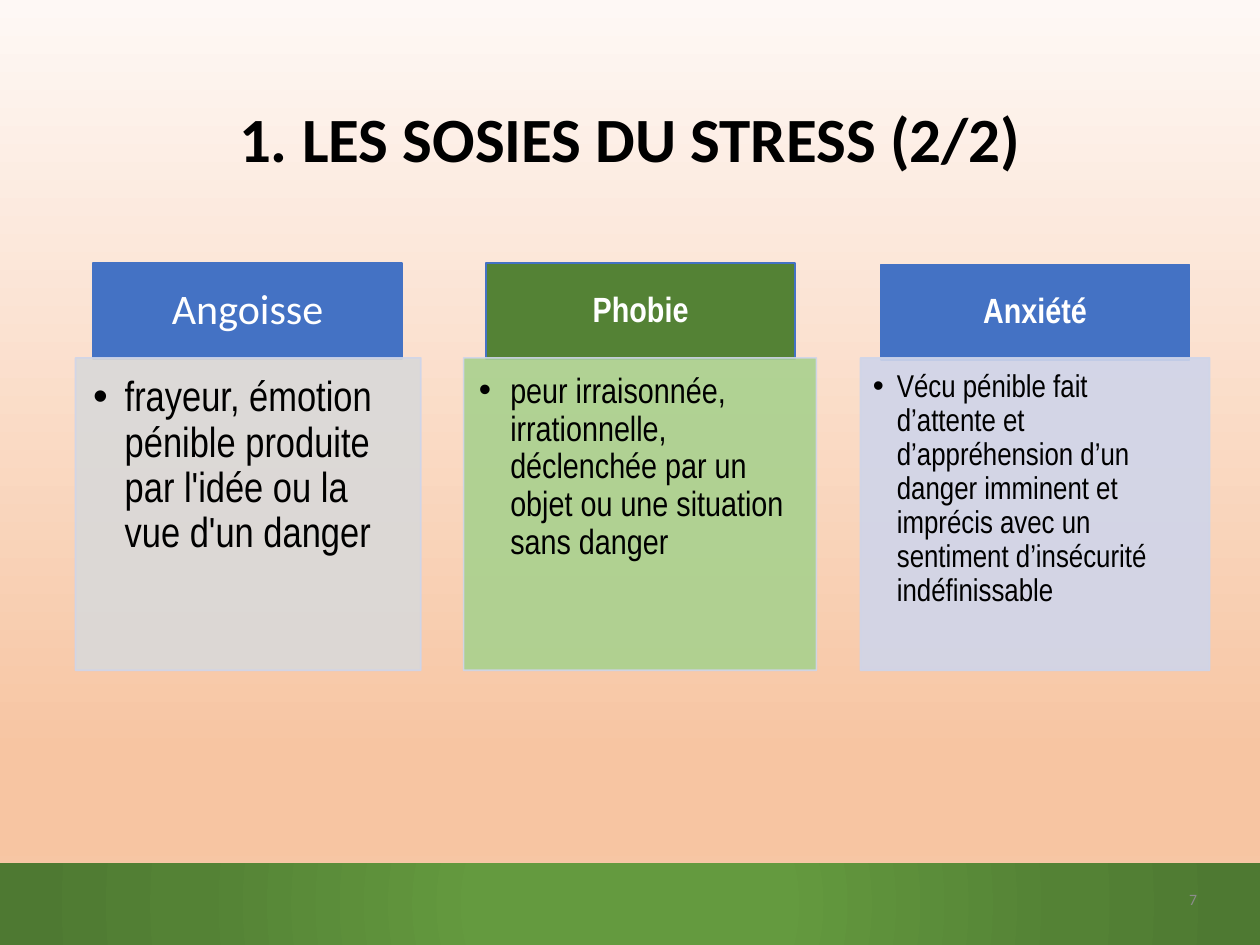
from lxml import etree
from pptx import Presentation
from pptx.dml.color import RGBColor
from pptx.enum.shapes import MSO_SHAPE as Shape
from pptx.enum.text import MSO_ANCHOR as Anchor, PP_ALIGN as Align
from pptx.oxml.ns import qn
from pptx.util import Inches, Pt

COLORS = {
    "black": "000000", "white": "FFFFFF", "blue": "4472C4", "green": "548235",
    "gray": "D9D9D9", "light green": "A9D18E", "light blue": "CFD5EA",
    "number": "8C8C8C", "cream": "FEF8F5", "peach": "F7C5A2",
    "pale peach": "FAD8C1", "leaf": "649A3F", "dark green": "4E7932",
}
BACKGROUND = [(0, "cream"), (80, "peach"), (90, "peach"), (100, "pale peach")]
BAND = [(0, "leaf"), (23, "leaf"), (69, "green"), (97, "dark green")]
TITLE = "1. LES SOSIES DU STRESS (2/2)"
PAGE = "7"
CARDS = [
    dict(head="Angoisse", head_font=(24, "Calibri", False), head_fill="blue",
         head_at=(0.74, 2.09), head_insets=(0.19, 0.11, 0.19, 0.11),
         body="frayeur, émotion pénible produite par l'idée ou la vue d'un danger",
         size=24, fill="gray", left=0.6, width=2.74,
         insets=(0.14, 0.14, 0.19, 0.21), indent=0.25),
    dict(head="Phobie", head_font=(20, "Arial Narrow", True), head_fill="green",
         head_at=(3.86, 2.09), head_insets=(0.16, 0.09, 0.16, 0.09),
         body="peur irraisonnée, irrationnelle, déclenchée par un objet ou une "
              "situation sans danger",
         size=20, fill="light green", left=3.68, width=2.8,
         insets=(0.12, 0.12, 0.16, 0.17), indent=0.25),
    dict(head="Anxiété", head_font=(20, "Arial Narrow", True), head_fill="blue",
         head_at=(6.99, 2.1), head_insets=(0.16, 0.09, 0.16, 0.09),
         body="Vécu pénible fait d’attente et d’appréhension d’un danger imminent "
              "et imprécis avec un sentiment d’insécurité indéfinissable",
         size=18, fill="light blue", left=6.83, width=2.77,
         insets=(0.1, 0.1, 0.14, 0.16), indent=0.19),
]
HEAD_SIZE = (2.45, 0.76)
BODY_TOP, BODY_HEIGHT = 2.84, 2.48


def rgb(name):
    return RGBColor.from_string(COLORS[name])


def set_gradient(parent, stops, radial=False):
    grad = etree.Element(qn("a:gradFill"), rotWithShape="1")
    stop_list = etree.SubElement(grad, qn("a:gsLst"))
    for pos, name in stops:
        stop = etree.SubElement(stop_list, qn("a:gs"), pos=str(pos * 1000))
        etree.SubElement(stop, qn("a:srgbClr"), val=COLORS[name])
    if radial:
        circle = etree.SubElement(grad, qn("a:path"), path="circle")
        etree.SubElement(circle, qn("a:fillToRect"),
                         l="50000", t="50000", r="50000", b="50000")
    else:
        etree.SubElement(grad, qn("a:lin"), ang="5400000", scaled="0")
    parent.replace(parent.find(qn("a:solidFill")), grad)


def add_rect(slide, box, fill, line=None, alpha=100):
    sp = slide.shapes.add_shape(Shape.RECTANGLE, *map(Inches, box))
    sp.shadow.inherit = False
    sp.fill.solid()
    sp.fill.fore_color.rgb = rgb(fill)
    if line:
        sp.line.color.rgb = rgb(line)
        sp.line.width = Pt(1)
    else:
        sp.line.fill.background()
    if alpha < 100:
        for color in sp.element.spPr.iter(qn("a:srgbClr")):
            etree.SubElement(color, qn("a:alpha"), val=str(alpha * 1000))
    return sp


def set_text(sp, text, size, font, color, bold=False, align=Align.CENTER,
             anchor=Anchor.MIDDLE, insets=(0.1, 0.05, 0.1, 0.05), indent=0):
    tf = sp.text_frame
    tf.word_wrap = True
    tf.vertical_anchor = anchor
    (tf.margin_left, tf.margin_top,
     tf.margin_right, tf.margin_bottom) = map(Inches, insets)
    p = tf.paragraphs[0]
    p.text = text
    p.alignment = align
    p.line_spacing = 0.9
    if indent:
        props = p._p.get_or_add_pPr()
        props.set("marL", str(Inches(indent)))
        props.set("indent", str(-Inches(indent)))
        etree.SubElement(props, qn("a:buFont"), typeface="Arial")
        etree.SubElement(props, qn("a:buChar"), char="•")
    p.font.size = Pt(size)
    p.font.name = font
    p.font.bold = bold
    p.font.color.rgb = rgb(color)


def add_text(slide, box, *args, **kwargs):
    set_text(slide.shapes.add_textbox(*map(Inches, box)), *args, **kwargs)


def add_card(slide, card):
    head = add_rect(slide, card["head_at"] + HEAD_SIZE, card["head_fill"], "blue")
    size, font, bold = card["head_font"]
    set_text(head, card["head"], size, font, "white", bold,
             insets=card["head_insets"])
    body = add_rect(slide, (card["left"], BODY_TOP, card["width"], BODY_HEIGHT),
                    card["fill"], "light blue", alpha=90)
    set_text(body, card["body"], card["size"], "Arial Narrow", "black",
             align=Align.LEFT, anchor=Anchor.TOP,
             insets=card["insets"], indent=card["indent"])


def main():
    prs = Presentation()
    prs.slide_width, prs.slide_height = Inches(10), Inches(7.5)
    slide = prs.slides.add_slide(prs.slide_layouts[6])
    slide.background.fill.solid()
    slide.background.fill.fore_color.rgb = rgb("peach")
    set_gradient(slide.element.find(".//" + qn("p:bgPr")), BACKGROUND)
    band = add_rect(slide, (0, 6.85, 10, 0.65), "green")
    set_gradient(band.element.spPr, BAND, radial=True)
    add_text(slide, (0.69, 0.4, 8.62, 1.45), TITLE, 36, "Calibri", "black", True)
    for card in CARDS:
        add_card(slide, card)
    add_text(slide, (8.87, 6.95, 0.73, 0.4), PAGE, 9, "Calibri", "number",
             align=Align.RIGHT)
    prs.save("out.pptx")


if __name__ == "__main__":
    main()
